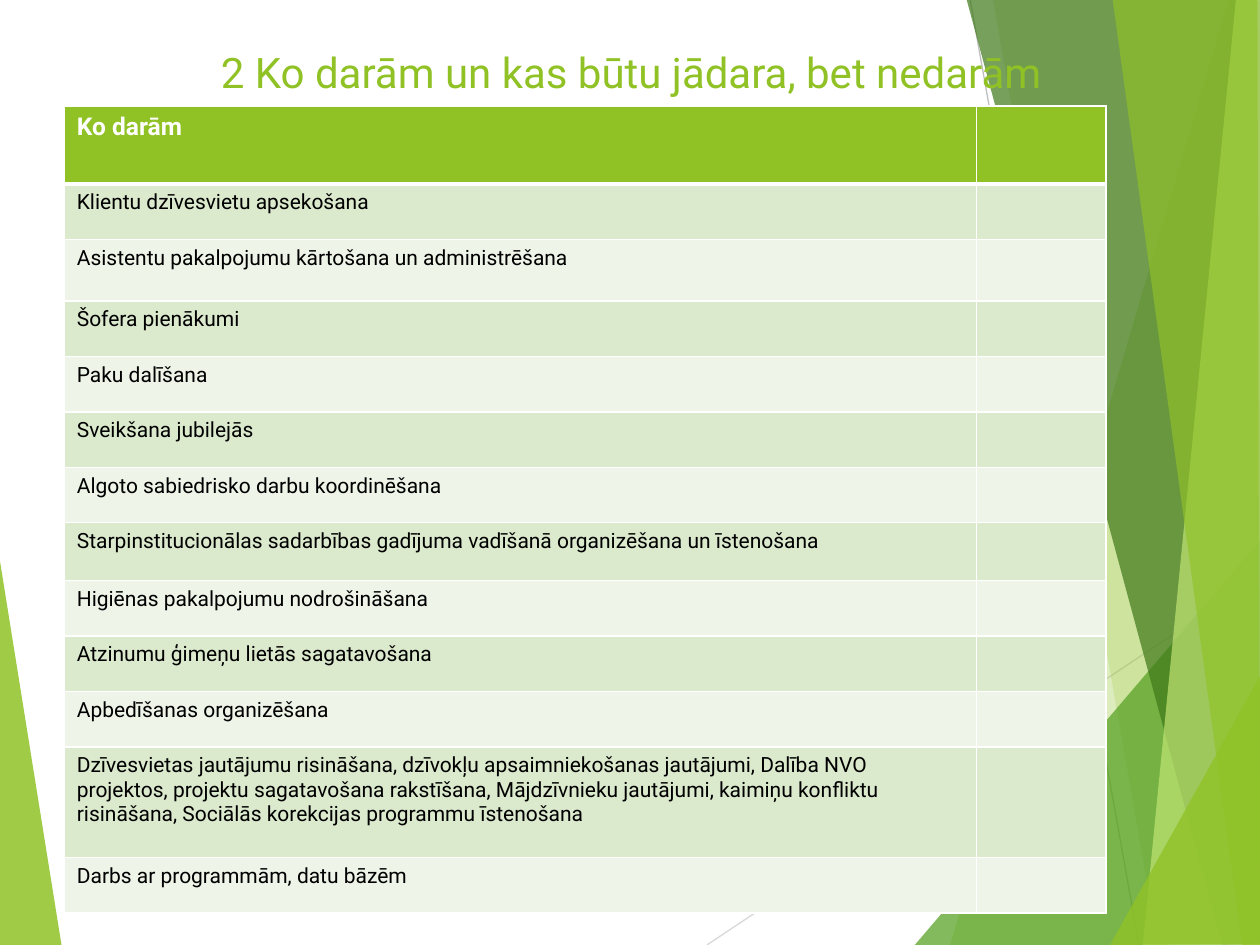
from dataclasses import dataclass

from lxml import etree
from pptx import Presentation
from pptx import util as u
from pptx.dml.color import RGBColor
from pptx.enum import shapes, text
from pptx.oxml.ns import qn


@dataclass(frozen=True)
class Theme:
    font: str = "Roboto"
    accent: str = "90C226"
    white: str = "FFFFFF"
    body: str = "000000"
    bands: tuple = ("DBE9CD", "EEF4E8")
    title_size: int = 24
    header_size: int = 14
    body_size: int = 12


@dataclass(frozen=True)
class Facet:
    color: str
    opacity: int
    points: tuple


@dataclass(frozen=True)
class Ray:
    color: str
    start: tuple
    end: tuple


THEME = Theme()

# Background artwork, from back to front
BACKGROUND = (
    Facet("90C226", 85, ((-0.01, 4.39), (0.49, 7.51), (-0.01, 7.5))),
    Ray("D9D9D9", (5.61, 7.5), (10.01, 4.57)),
    Ray("BFBFBF", (7.7, 0), (9.04, 7.5)),
    Facet("90C226", 30, ((9.75, 0), (7.54, 7.5), (10.02, 7.51), (10.01, 0.01))),
    Facet("90C226", 20, ((7.88, -0.01), (9.19, 7.5), (10.01, 7.5), (10.01, -0.01))),
    Facet("54A021", 72, ((7.26, 7.5), (10, 4.29), (10.01, 7.5))),
    Facet("3F7819", 70, ((7.67, -0.01), (9.7, 7.5), (10.01, 7.49), (10.01, -0.01))),
    Facet("C0E474", 70, ((9.81, -0.01), (9.07, 7.5), (10.01, 7.5), (10, -0.01))),
    Facet("90C226", 65, ((8.83, -0.01), (9.86, 7.5), (10, 7.5), (9.98, -0.01))),
    Facet("90C226", 80, ((8.81, 7.5), (10.01, 5.35), (10.01, 7.49))),
)

TITLE = "2 Ko darām un kas būtu jādara, bet nedarām"
HEADER = "Ko darām"
TASKS = (
    "Klientu dzīvesvietu apsekošana",
    "Asistentu pakalpojumu kārtošana un administrēšana",
    "Šofera pienākumi",
    "Paku dalīšana",
    "Sveikšana jubilejās",
    "Algoto sabiedrisko darbu koordinēšana",
    "Starpinstitucionālas sadarbības gadījuma vadīšanā organizēšana un īstenošana",
    "Higiēnas pakalpojumu nodrošināšana",
    "Atzinumu ģimeņu lietās sagatavošana",
    "Apbedīšanas organizēšana",
    "Dzīvesvietas jautājumu risināšana, dzīvokļu apsaimniekošanas jautājumi, "
    "Dalība NVO projektos, projektu sagatavošana rakstīšana, Mājdzīvnieku jautājumi, "
    "kaimiņu konfliktu risināšana, Sociālās korekcijas programmu īstenošana",
    "Darbs ar programmām, datu bāzēm",
)
COLUMN_WIDTHS = (7.24, 1.03)
ROW_HEIGHT = 0.44
SPECIAL_HEIGHTS = {0: 0.62, 2: 0.49, 7: 0.46, 11: 0.88}


def draw_facet(slide, facet: Facet) -> None:
    points = [(u.Inches(x), u.Inches(y)) for x, y in facet.points]
    builder = slide.shapes.build_freeform(*points[0])
    builder.add_line_segments(points[1:], close=True)
    shape = builder.convert_to_shape()
    shape.shadow.inherit = False
    shape.line.fill.background()
    shape.fill.solid()
    shape.fill.fore_color.rgb = RGBColor.from_string(facet.color)
    color = shape.element.spPr.find(qn("a:solidFill"))[0]
    etree.SubElement(color, qn("a:alpha"), val=str(facet.opacity * 1000))


def draw_ray(slide, ray: Ray) -> None:
    ends = [u.Inches(value) for value in ray.start + ray.end]
    connector = slide.shapes.add_connector(shapes.MSO_CONNECTOR.STRAIGHT, *ends)
    connector.line.color.rgb = RGBColor.from_string(ray.color)
    connector.line.width = u.Pt(0.75)
    etree.SubElement(connector.element.spPr, qn("a:effectLst"))


def format_text(paragraph, size: int, color: str, bold: bool = False) -> None:
    for run in paragraph.runs:
        run.font.name = THEME.font
        run.font.size = u.Pt(size)
        run.font.bold = bold
        run.font.color.rgb = RGBColor.from_string(color)


def format_title(title) -> None:
    title.left, title.top = u.Inches(0.51), u.Inches(0.29)
    title.width, title.height = u.Inches(9), u.Inches(0.63)
    frame = title.text_frame
    frame.text = TITLE
    frame.word_wrap = True
    frame.auto_size = text.MSO_AUTO_SIZE.NONE
    frame.vertical_anchor = text.MSO_ANCHOR.TOP
    frame.margin_top = u.Inches(0.08)
    frame.paragraphs[0].alignment = text.PP_ALIGN.CENTER
    format_text(frame.paragraphs[0], THEME.title_size, THEME.accent)
    # Bring the title in front of the artwork
    title.element.getparent().append(title.element)


def format_cell(cell, fill: str, top: int, bottom: int) -> None:
    cell.fill.solid()
    cell.fill.fore_color.rgb = RGBColor.from_string(fill)
    properties = cell._tc.get_or_add_tcPr()
    sides = (("lnL", 1), ("lnR", 1), ("lnT", top), ("lnB", bottom))
    for position, (side, width) in enumerate(sides):
        border = etree.Element(qn(f"a:{side}"), w=str(u.Pt(width)))
        solid = etree.SubElement(border, qn("a:solidFill"))
        etree.SubElement(solid, qn("a:srgbClr"), val=THEME.white)
        properties.insert(position, border)


def draw_table(slide) -> None:
    labels = (HEADER,) + TASKS
    heights = [SPECIAL_HEIGHTS.get(i, ROW_HEIGHT) for i in range(len(labels))]
    table = slide.shapes.add_table(
        len(labels), len(COLUMN_WIDTHS), u.Inches(0.51), u.Inches(0.84),
        u.Inches(sum(COLUMN_WIDTHS)), u.Inches(sum(heights))).table
    for column, width in zip(table.columns, COLUMN_WIDTHS):
        column.width = u.Inches(width)
    for index, (label, height) in enumerate(zip(labels, heights)):
        header = index == 0
        table.rows[index].height = u.Inches(height)
        fill = THEME.accent if header else THEME.bands[(index - 1) % 2]
        for column in range(len(COLUMN_WIDTHS)):
            format_cell(table.cell(index, column), fill,
                        top=3 if index == 1 else 1, bottom=3 if header else 1)
        frame = table.cell(index, 0).text_frame
        frame.text = label
        size = THEME.header_size if header else THEME.body_size
        color = THEME.white if header else THEME.body
        format_text(frame.paragraphs[0], size, color, bold=header)


def main() -> None:
    presentation = Presentation()
    presentation.slide_width, presentation.slide_height = u.Inches(10), u.Inches(7.5)
    slide = presentation.slides.add_slide(presentation.slide_layouts[5])
    for part in BACKGROUND:
        draw = draw_facet if isinstance(part, Facet) else draw_ray
        draw(slide, part)
    format_title(slide.shapes.title)
    draw_table(slide)
    presentation.save("out.pptx")


if __name__ == "__main__":
    main()
